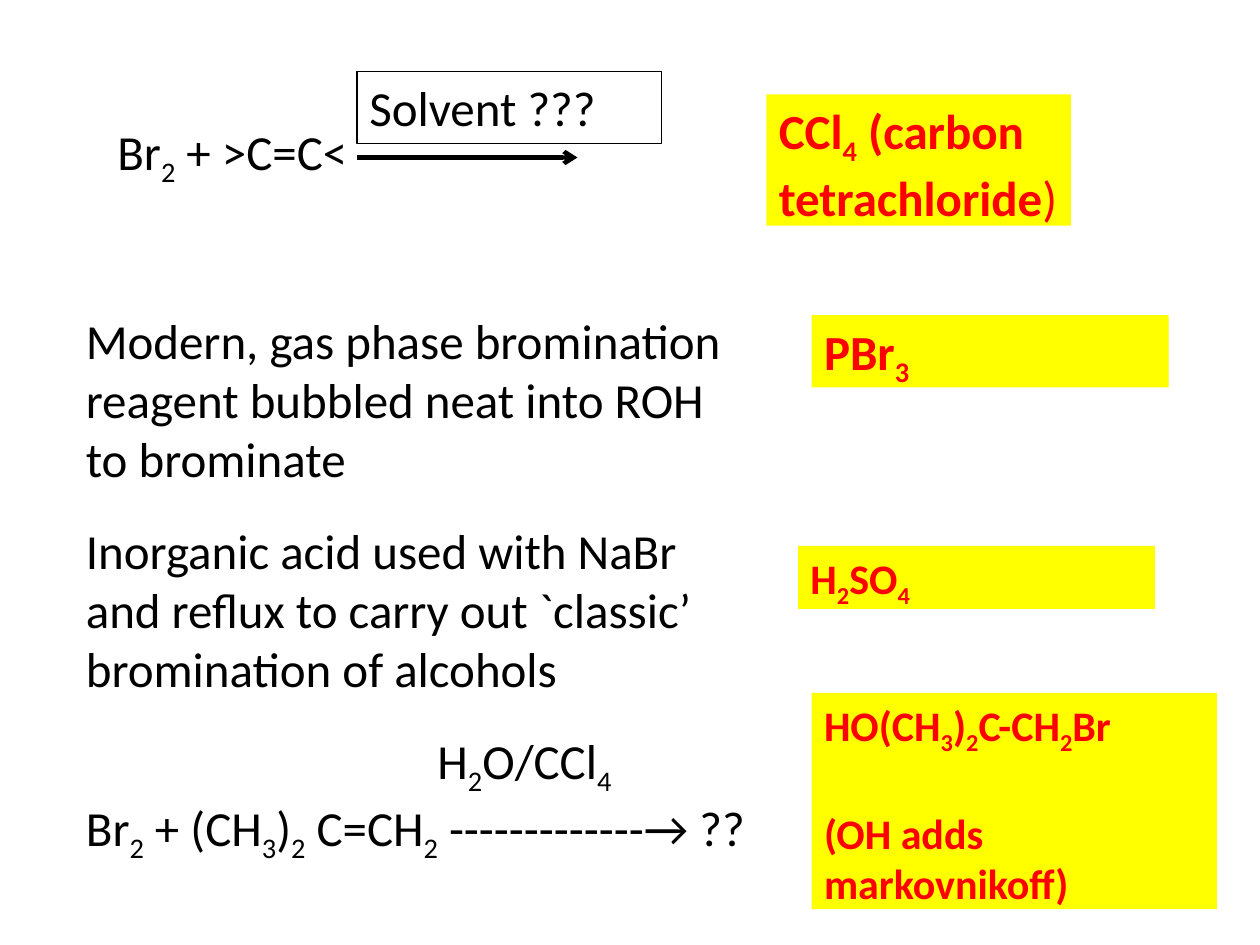
"""Build a bromination quiz slide with questions on the left and answers on the right."""
import itertools

import lxml.etree
import pptx
import pptx.dml.color
import pptx.enum.shapes
import pptx.enum.text
import pptx.oxml.ns
import pptx.util

BLACK = pptx.dml.color.RGBColor(0x00, 0x00, 0x00)
RED = pptx.dml.color.RGBColor(0xFF, 0x00, 0x00)
YELLOW = pptx.dml.color.RGBColor(0xFF, 0xFF, 0x00)
FONT = "Calibri"
COLUMNS, ROWS = 120, 90
QUESTION_LEFT, ANSWER_LEFT = 7, 77.3
CONDITION_INDENT = pptx.util.Inches(2.79)
ANSWER_GAP = pptx.util.Pt(29)

QUESTIONS = [
    ((10, 11, 36, 10.6), ["Br2 + >C=C<"]),
    ((QUESTION_LEFT, 29, 66, 18.1),
     ["Modern, gas phase bromination reagent bubbled neat into ROH to brominate"]),
    ((QUESTION_LEFT, 49, 66, 18.1),
     ["Inorganic acid used with NaBr and reflux to carry out `classic’ bromination of alcohols"]),
    ((QUESTION_LEFT, 69, 68, 12.5),
     ["H2O/CCl4", "Br2 + (CH3)2 C=CH2 -------------→ ??"]),
]
SOLVENT = ((34, 6.8, 29, 6.9), ["Solvent ???"])
ARROW = (34, 15, 55, 15)
ANSWERS = [
    ((73, 9, 29, 12.5), ["CCl4 (carbon tetrachloride)"], 28),
    ((ANSWER_LEFT, 30, 34, 6.9), ["PBr3"], 28),
    ((76, 52, 34, 6), ["H2SO4"], 24),
    ((ANSWER_LEFT, 66, 38.6, 20.6), ["HO(CH3)2C-CH2Br", "(OH adds markovnikoff)"], 24),
]

deck = pptx.Presentation()
deck.slide_width = pptx.util.Inches(10)
deck.slide_height = pptx.util.Inches(7.5)
page = deck.slides.add_slide(deck.slide_layouts[6])


def on_grid(cells):
    units = itertools.cycle((deck.slide_width / COLUMNS, deck.slide_height / ROWS))
    return [round(cell * unit) for cell, unit in zip(cells, units)]


def add_span(para, text, size, color, bold):
    span = para.add_run()
    span.text = text
    span.font.name = FONT
    span.font.size = pptx.util.Pt(size)
    span.font.color.rgb = color
    span.font.bold = bold
    return span


def add_box(cells, lines, size=28, color=BLACK, bold=False, fill=None, outline=None):
    box = page.shapes.add_textbox(*on_grid(cells))
    if fill is not None:
        box.fill.solid()
        box.fill.fore_color.rgb = fill
    if outline is not None:
        box.line.color.rgb = outline
        box.line.width = pptx.util.Pt(0.75)
    frame = box.text_frame
    frame.word_wrap = True
    frame.auto_size = pptx.enum.text.MSO_AUTO_SIZE.SHAPE_TO_FIT_TEXT
    for number, line in enumerate(lines):
        para = frame.add_paragraph() if number else frame.paragraphs[0]
        for is_subscript, letters in itertools.groupby(line, str.isdigit):
            span = add_span(para, "".join(letters), size, color, bold)
            if is_subscript:
                span._r.get_or_add_rPr().set("baseline", "-25000")
    return box


question_boxes = [add_box(cells, lines) for cells, lines in QUESTIONS]
condition = question_boxes[-1].text_frame.paragraphs[0]
condition._p.get_or_add_pPr().set("marL", str(CONDITION_INDENT))

add_box(*SOLVENT, outline=BLACK)

answer_boxes = [add_box(cells, lines, size, RED, True, YELLOW)
                for cells, lines, size in ANSWERS]
answer_boxes[-1].text_frame.paragraphs[1].space_before = ANSWER_GAP
solvent_answer = answer_boxes[0].text_frame.paragraphs[0]
last_span = solvent_answer.runs[-1]
last_span.text = last_span.text.removesuffix(")")
add_span(solvent_answer, ")", 28, RED, False)

arrow = page.shapes.add_connector(pptx.enum.shapes.MSO_CONNECTOR.STRAIGHT, *on_grid(ARROW))
arrow.line.color.rgb = BLACK
arrow.line.width = pptx.util.Pt(2.5)
lxml.etree.SubElement(arrow.line._get_or_add_ln(), pptx.oxml.ns.qn("a:tailEnd"), type="arrow")
lxml.etree.SubElement(arrow._element.spPr, pptx.oxml.ns.qn("a:effectLst"))

deck.save("out.pptx")
